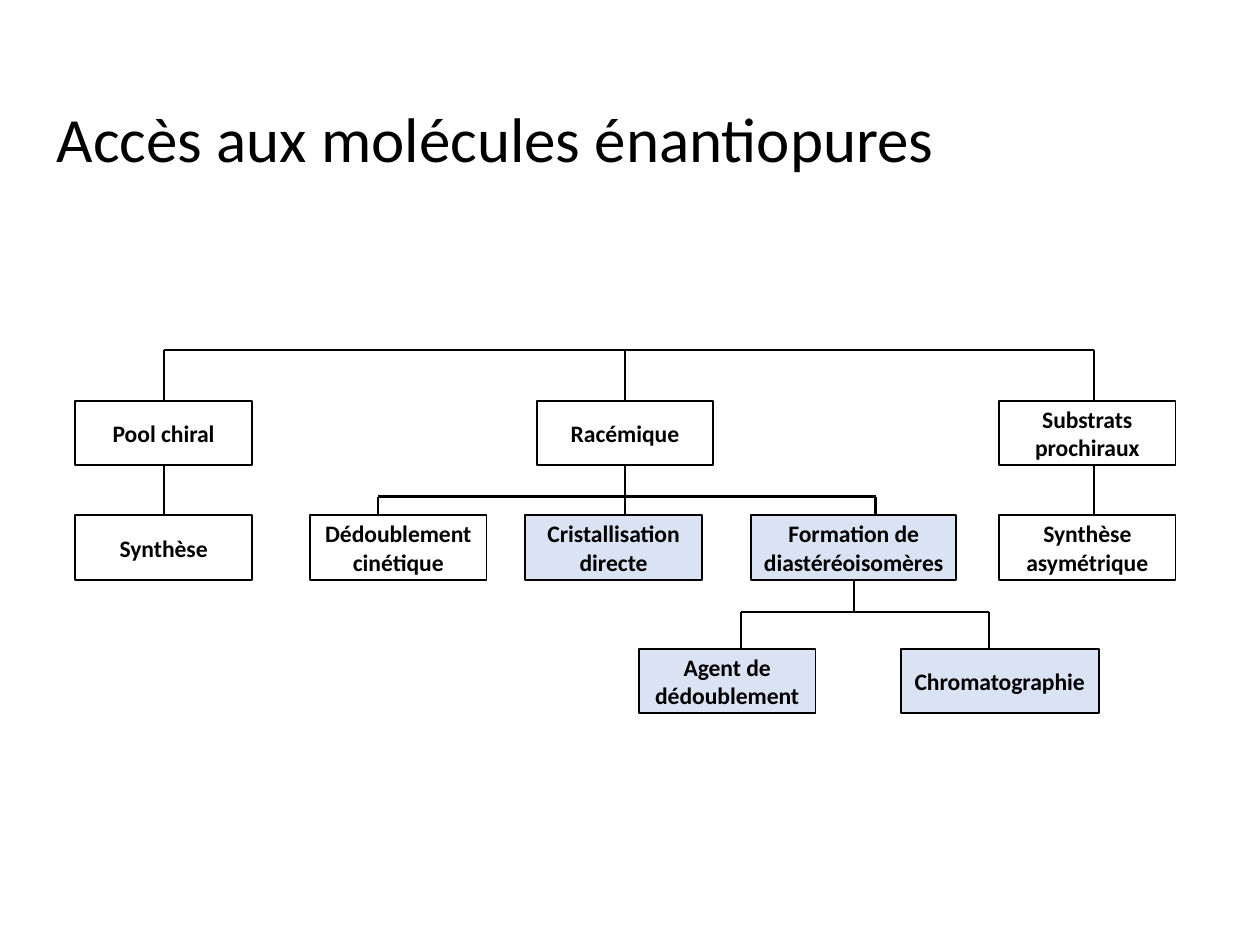
from dataclasses import dataclass

from pptx import Presentation
from pptx import util as u
from pptx.dml.color import RGBColor
from pptx.enum import shapes, text
from pptx.oxml.ns import qn
from lxml import etree


@dataclass(frozen=True)
class Theme:
    font: str = "Calibri"
    ink: RGBColor = RGBColor(0x00, 0x00, 0x00)
    highlight: RGBColor = RGBColor(0xDA, 0xE3, 0xF3)
    title_size: float = 36
    box_size: float = 13.5
    box_line: float = 1
    link_line: float = 1.25


BOX_WIDTH, BOX_HEIGHT = 3.56, 1.3
TOP, BOTTOM = 0, 2
# Tops of the three rows of boxes and heights of the rails above them
SOURCES, METHODS, TECHNIQUES = 8.08, 10.39, 13.08
SOURCE_RAIL, METHOD_RAIL, TECHNIQUE_RAIL = 7.06, 10.01, 12.34
LEFT_COLUMN, RIGHT_COLUMN = 1.52, 20.14
RIGHT_LINK = 22.05


class TreeSlide:
    """Draws a tree diagram on one slide; lengths are in centimetres."""

    def __init__(self, slide, theme):
        self.slide = slide
        self.theme = theme

    def style_text(self, frame, size, bold):
        for paragraph in frame.paragraphs:
            for run in paragraph.runs:
                run.font.name = self.theme.font
                run.font.size = u.Pt(size)
                run.font.bold = bold
                run.font.color.rgb = self.theme.ink

    def title(self, wording, left, top, width, height):
        shape = self.slide.shapes.title
        shape.left, shape.top = u.Cm(left), u.Cm(top)
        shape.width, shape.height = u.Cm(width), u.Cm(height)
        frame = shape.text_frame
        frame.text = wording
        frame.vertical_anchor = text.MSO_ANCHOR.MIDDLE
        frame.paragraphs[0].alignment = text.PP_ALIGN.LEFT
        frame.paragraphs[0].line_spacing = 0.9
        self.style_text(frame, self.theme.title_size, False)

    def box(self, wording, left, top, width=BOX_WIDTH, highlighted=False):
        shape = self.slide.shapes.add_shape(
            shapes.MSO_SHAPE.RECTANGLE,
            u.Cm(left), u.Cm(top), u.Cm(width), u.Cm(BOX_HEIGHT))
        shape.shadow.inherit = False
        if highlighted:
            shape.fill.solid()
            shape.fill.fore_color.rgb = self.theme.highlight
        else:
            shape.fill.background()
        shape.line.color.rgb = self.theme.ink
        shape.line.width = u.Pt(self.theme.box_line)
        frame = shape.text_frame
        frame.text = wording
        frame.word_wrap = True
        frame.vertical_anchor = text.MSO_ANCHOR.MIDDLE
        frame.margin_left = frame.margin_right = u.Cm(0.18)
        frame.margin_top = frame.margin_bottom = u.Cm(0.1)
        frame.paragraphs[0].alignment = text.PP_ALIGN.CENTER
        self.style_text(frame, self.theme.box_size, True)
        return shape

    def link(self, start, end, start_box=None, end_box=None):
        """Draw a line, joined to the bottom of start_box and the top of end_box."""
        connector = self.slide.shapes.add_connector(
            shapes.MSO_CONNECTOR.STRAIGHT, *map(u.Cm, start + end))
        connector.line.color.rgb = self.theme.ink
        connector.line.width = u.Pt(self.theme.link_line)
        etree.SubElement(connector._element.spPr, qn("a:effectLst"))
        if start_box is not None:
            connector.begin_connect(start_box, BOTTOM)
        if end_box is not None:
            connector.end_connect(end_box, TOP)

    def rail(self, height, row_top, drops):
        """Draw a rail with a drop to the row at each (x, box to join or None)."""
        self.link((drops[0][0], height), (drops[-1][0], height))
        for x, child in drops:
            self.link((x, height), (x, row_top), end_box=child)


def middle(box):
    return (box.left + box.width / 2) / u.Cm(1)


def main():
    presentation = Presentation()
    presentation.slide_width, presentation.slide_height = u.Cm(25.4), u.Cm(19.05)
    title_only = presentation.slide_layouts[5]
    tree = TreeSlide(presentation.slides.add_slide(title_only), Theme())

    tree.title("Accès aux molécules énantiopures", 0.89, 1.02, 24.87, 3.68)

    pool = tree.box("Pool chiral", LEFT_COLUMN, SOURCES)
    racemic = tree.box("Racémique", 10.82, SOURCES)
    tree.box("Substrats prochiraux", RIGHT_COLUMN, SOURCES)

    synthesis = tree.box("Synthèse", LEFT_COLUMN, METHODS)
    tree.box("Dédoublement cinétique", 6.25, METHODS)
    tree.box("Cristallisation directe", 10.59, METHODS, highlighted=True)
    diastereomers = tree.box("Formation de diastéréoisomères", 15.14, METHODS,
                             width=4.14, highlighted=True)
    tree.box("Synthèse asymétrique", RIGHT_COLUMN, METHODS)

    tree.box("Agent de dédoublement", 12.88, TECHNIQUES, highlighted=True)
    tree.box("Chromatographie", 18.16, TECHNIQUES, width=3.99, highlighted=True)

    pool_x, racemic_x = middle(pool), middle(racemic)
    tree.rail(SOURCE_RAIL, SOURCES,
              [(pool_x, pool), (racemic_x, racemic), (RIGHT_LINK, None)])
    tree.rail(METHOD_RAIL, METHODS,
              [(7.62, None), (racemic_x, None), (17.65, None)])
    tree.rail(TECHNIQUE_RAIL, TECHNIQUES, [(14.94, None), (19.94, None)])

    tree.link((pool_x, SOURCES + BOX_HEIGHT), (pool_x, METHODS), pool, synthesis)
    tree.link((RIGHT_LINK, SOURCES + BOX_HEIGHT), (RIGHT_LINK, METHODS))
    for parent, row_top, rail in ((racemic, SOURCES, METHOD_RAIL),
                                  (diastereomers, METHODS, TECHNIQUE_RAIL)):
        x = middle(parent)
        tree.link((x, row_top + BOX_HEIGHT), (x, rail), parent)

    presentation.save("out.pptx")


if __name__ == "__main__":
    main()
